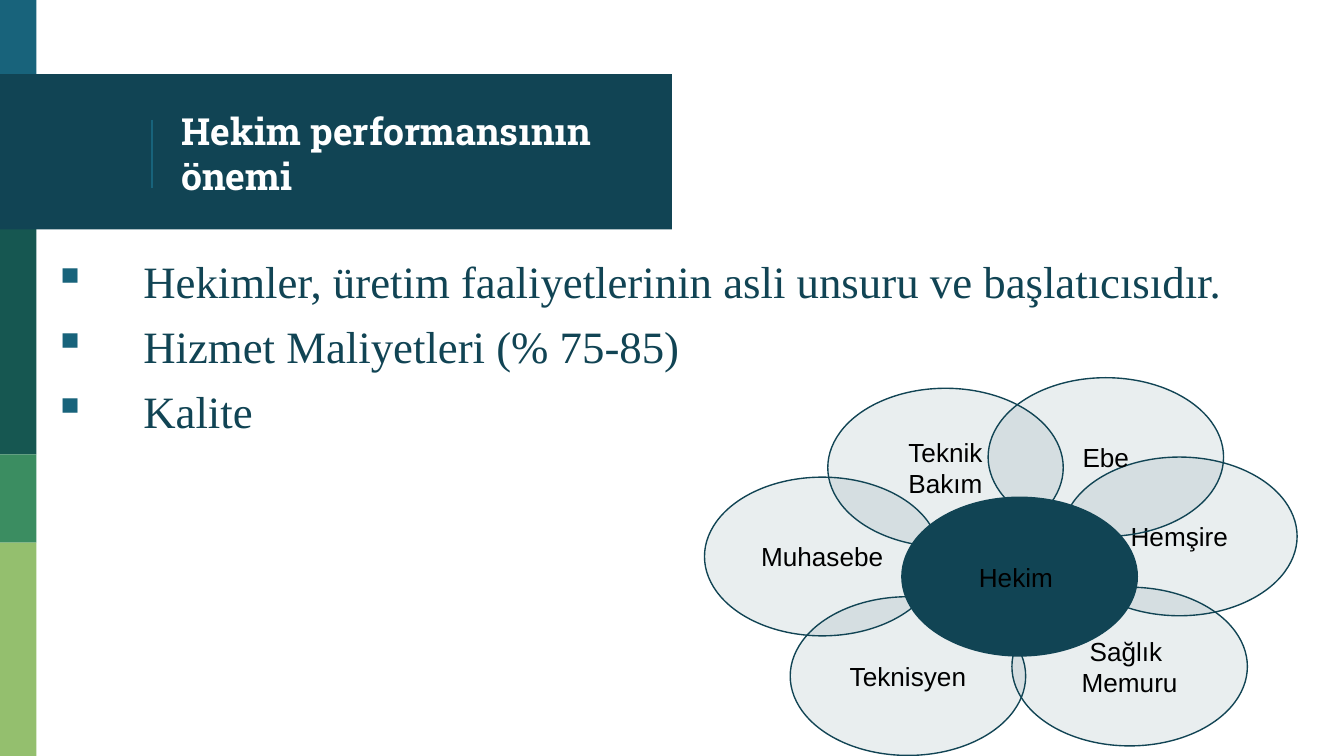
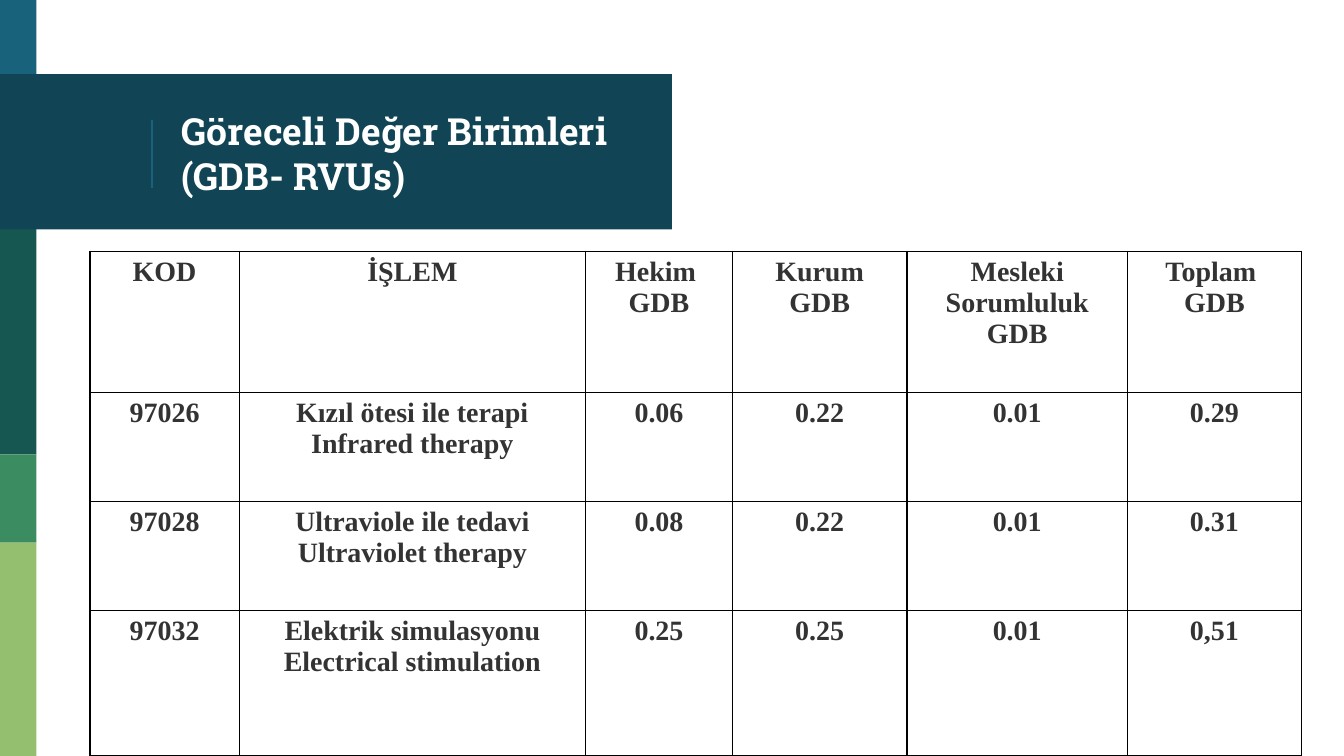
from collections import namedtuple
from dataclasses import dataclass

from lxml.etree import SubElement
from pptx import Presentation
from pptx.dml.color import RGBColor
from pptx.enum.shapes import MSO_CONNECTOR, MSO_SHAPE
from pptx.enum.text import MSO_ANCHOR, PP_ALIGN
from pptx.oxml.ns import qn
from pptx.util import Cm, Pt

Box = namedtuple("Box", "x y w h")


@dataclass(frozen=True)
class Theme:
    blue: str = "18637B"
    navy: str = "114454"
    pine: str = "165751"
    green: str = "3B8D61"
    lime: str = "94BF6E"
    white: str = "FFFFFF"
    black: str = "000000"
    grey: str = "333333"
    line: float = 0.75
    petal_alpha: int = 9
    title: tuple = ("Roboto Slab", 20, True)
    body: tuple = ("Times New Roman", 24, False)
    cell: tuple = ("Times New Roman", 15, True)
    petal: tuple = ("Arial", 14, False)


T = Theme()
PAGE = Box(0, 0, 25.4, 14.29)
BANNER = Box(0, 1.4, 12.7, 2.94)
BODY = Box(0.76, 4.55, 23.67, 4.09)
FLOWER = Box(13.31, 7.14, 11.2, 7.14)
TABLE = Box(1.7, 4.75, 22.89, 9.53)

STRIP_W = 0.69
STRIPS = [(0, 1.47, T.blue), (4.32, 4.27, T.pine),
          (8.59, 1.67, T.green), (10.26, 4.03, T.lime)]

PETAL_W, PETAL_H = 4.45, 3.0
HUB = (5.96, 3.76)
# Text and centre of each petal, measured from the hub.
PETALS = [
    ("Hemşire", 3.02, -0.76),
    ("Sağlık \nMemuru", 2.08, 1.7),
    ("Teknisyen", -2.11, 1.88),
    ("Muhasebe", -3.73, -0.38),
    ("Teknik\nBakım", -1.4, -2.06),
    ("Ebe", 1.63, -2.26),
]

BULLETS = [
    "Hekimler, üretim faaliyetlerinin asli unsuru ve başlatıcısıdır.",
    "Hizmet Maliyetleri (% 75-85)",
    "Kalite",
]

COL_WIDTHS = [2.82, 6.55, 2.77, 3.3, 4.17, 3.28]
ROW_HEIGHTS = [2.67, 2.06, 2.06, 2.74]
ROWS = [
    ["KOD", "İŞLEM", "Hekim \nGDB", "Kurum\nGDB",
     "Mesleki Sorumluluk GDB", "Toplam \nGDB"],
    ["97026", "Kızıl ötesi ile terapi\nInfrared therapy",
     "0.06", "0.22", "0.01", "0.29"],
    ["97028", "Ultraviole ile tedavi\nUltraviolet therapy",
     "0.08", "0.22", "0.01", "0.31"],
    ["97032", "Elektrik simulasyonu\nElectrical stimulation",
     "0.25", "0.25", "0.01", "0,51"],
]


def apply(obj, **values):
    for name, value in values.items():
        setattr(obj, name, value)


def cm(*lengths):
    return [Cm(n) for n in lengths]


def rgb(color):
    return RGBColor.from_string(color)


def margins(x, y):
    """Return the four text margins as format values."""
    return dict(margin_left=Cm(x), margin_right=Cm(x),
                margin_top=Cm(y), margin_bottom=Cm(y))


def write(tf, text, style, color, **para):
    """Fill a text frame, one paragraph for each line of text."""
    name, size, bold = style
    for i, line in enumerate(text.split("\n")):
        p = tf.add_paragraph() if i else tf.paragraphs[0]
        apply(p, **para)
        r = p.add_run()
        r.text = line
        apply(r.font, name=name, size=Pt(size), bold=bold)
        r.font.color.rgb = rgb(color)


def add_filled(shapes, kind, box, color):
    sp = shapes.add_shape(kind, *cm(*box))
    sp.shadow.inherit = False
    sp.fill.solid()
    sp.fill.fore_color.rgb = rgb(color)
    sp.line.fill.background()
    return sp


def add_text_box(s, box, text, style, color, **frame):
    tf = s.shapes.add_textbox(*cm(*box)).text_frame
    apply(tf, word_wrap=True, **margins(0.25, 0.25), **frame)
    write(tf, text, style, color)
    return tf


def add_side_strips(s, box):
    for y, h, color in STRIPS:
        add_filled(s.shapes, MSO_SHAPE.RECTANGLE,
                   (box.x, box.y + y, STRIP_W, h), color)


def add_banner(s, box, title):
    add_filled(s.shapes, MSO_SHAPE.RECTANGLE, box, T.navy)
    x, y = box.x + 2.87, box.y + 0.86
    divider = s.shapes.add_connector(MSO_CONNECTOR.STRAIGHT,
                                     *cm(x, y, x, y + 1.3))
    divider.line.color.rgb = rgb(T.blue)
    divider.line.width = Pt(T.line)
    SubElement(divider.line._get_or_add_ln().getparent(), qn("a:effectLst"))
    add_text_box(s, (box.x + 3.18, box.y + 0.07, 8.92, 2.84), title,
                 T.title, T.white, vertical_anchor=MSO_ANCHOR.MIDDLE)


def add_bullets(s, box, lines):
    tf = add_text_box(s, box, "\n".join(lines), T.body, T.navy)
    for p in tf.paragraphs:
        p.space_before = Pt(6)
        pPr = p._p.get_or_add_pPr()
        pPr.set("marL", str(Cm(1.7)))
        pPr.set("indent", str(-Cm(1.7)))
        color = SubElement(pPr, qn("a:buClr"))
        SubElement(color, qn("a:srgbClr"), val=T.blue)
        SubElement(pPr, qn("a:buChar"), char="▪")


def add_petal(group, x, y, text, alpha=None):
    """Draw an ellipse centred on x, y; alpha is a percentage."""
    box = (x - PETAL_W / 2, y - PETAL_H / 2, PETAL_W, PETAL_H)
    sp = add_filled(group.shapes, MSO_SHAPE.OVAL, box, T.navy)
    if alpha:
        color = sp.fill._xPr.find(qn("a:solidFill"))[0]
        SubElement(color, qn("a:alpha"), val=str(alpha * 1000))
    sp.line.color.rgb = rgb(T.navy)
    sp.line.width = Pt(T.line)
    apply(sp.text_frame, word_wrap=False, vertical_anchor=MSO_ANCHOR.MIDDLE)
    write(sp.text_frame, text, T.petal, T.black, alignment=PP_ALIGN.CENTER)


def add_flower(s, box):
    group = s.shapes.add_group_shape()
    x, y = box.x + HUB[0], box.y + HUB[1]
    add_petal(group, x, y, "Hekim ")
    for text, dx, dy in PETALS:
        add_petal(group, x + dx, y + dy, text, T.petal_alpha)


def set_borders(cell):
    tcPr = cell._tc.get_or_add_tcPr()
    for i, side in enumerate(("lnL", "lnR", "lnT", "lnB")):
        ln = tcPr.makeelement(qn(f"a:{side}"), {"w": str(Pt(T.line))})
        fill = SubElement(ln, qn("a:solidFill"))
        SubElement(fill, qn("a:srgbClr"), val=T.black)
        tcPr.insert(i, ln)


def add_value_table(s, box, rows):
    table = s.shapes.add_table(len(rows), len(rows[0]), *cm(*box)).table
    apply(table, first_row=False, horz_banding=False)
    for col, width in zip(table.columns, COL_WIDTHS):
        col.width = Cm(width)
    for row, height, texts in zip(table.rows, ROW_HEIGHTS, rows):
        row.height = Cm(height)
        for cell, text in zip(row.cells, texts):
            apply(cell, **margins(0.25, 0.1))
            cell.fill.background()
            set_borders(cell)
            write(cell.text_frame, text, T.cell, T.grey,
                  alignment=PP_ALIGN.CENTER)


def add_titled_slide(prs, title):
    s = prs.slides.add_slide(prs.slide_layouts[6])
    s.background.fill.solid()
    s.background.fill.fore_color.rgb = rgb(T.white)
    add_side_strips(s, PAGE)
    add_banner(s, BANNER, title)
    return s


def build_importance_slide(prs):
    s = add_titled_slide(prs, "Hekim performansının önemi")
    add_bullets(s, BODY, BULLETS)
    add_flower(s, FLOWER)


def build_units_slide(prs):
    s = add_titled_slide(prs, "Göreceli Değer Birimleri (GDB- RVUs)")
    add_value_table(s, TABLE, ROWS)


def main():
    prs = Presentation()
    apply(prs, slide_width=Cm(PAGE.w), slide_height=Cm(PAGE.h))
    build_importance_slide(prs)
    build_units_slide(prs)
    prs.save("out.pptx")


if __name__ == "__main__":
    main()
